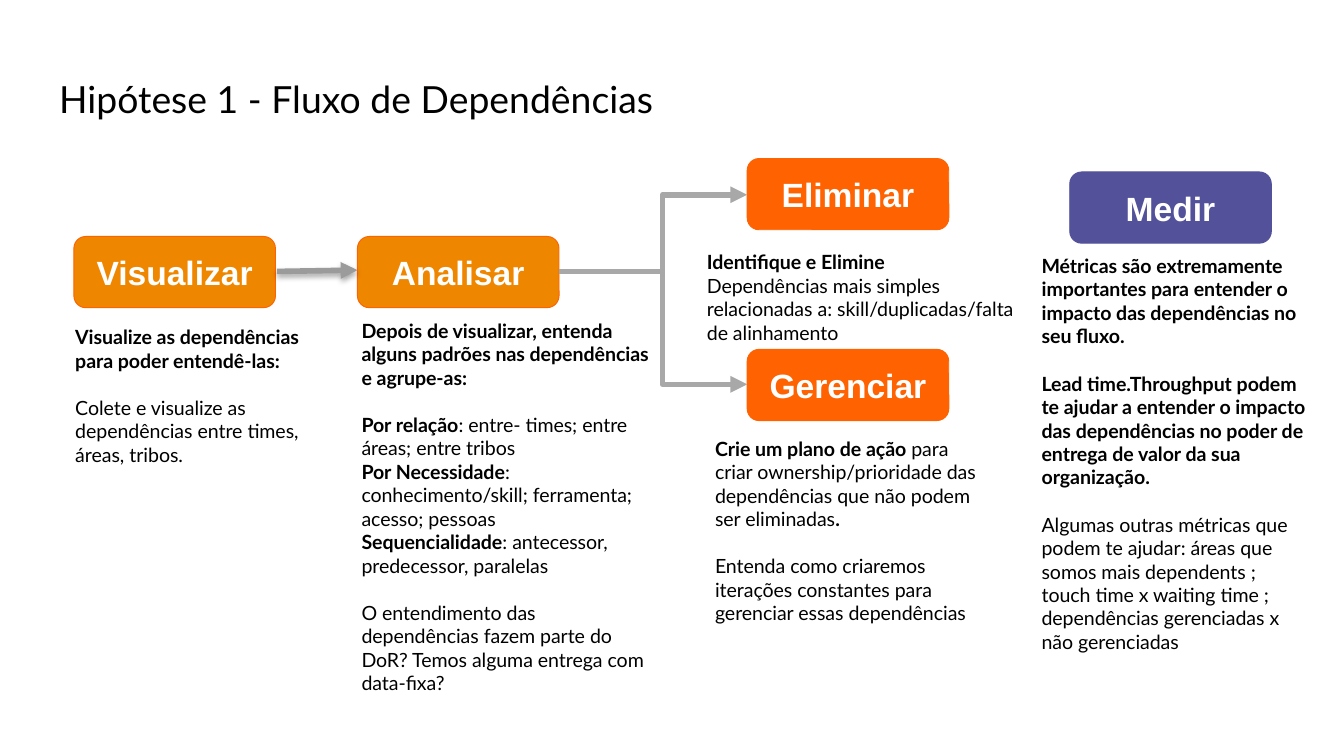
"""Build the dependency flow slide."""
from dataclasses import dataclass
from typing import Optional

from lxml import etree
from pptx import Presentation
from pptx.dml.color import RGBColor
from pptx.enum import shapes, text
from pptx.oxml import ns
from pptx.util import Inches, Pt

INSET = 0.03
STEP_W, STEP_H = 1.5, 0.53
BEND_X = 4.93
LINE = 12.6


@dataclass
class Step:
    label: str
    x: float
    y: float
    fill: str
    line: str


@dataclass
class Para:
    runs: list[tuple[str, bool]]
    gap: float = 0


@dataclass
class Note:
    x: float
    y: float
    w: float
    h: float
    paras: list[Para]


@dataclass
class Arrow:
    start: tuple[float, float]
    end: tuple[float, float]
    color: str
    bend: Optional[float] = None
    shadow: bool = False


STEPS = [
    Step("Visualizar", 0.55, 1.76, "EF8600", "FF6200"),
    Step("Analisar", 2.66, 1.76, "EF8600", "FF6200"),
    Step("Eliminar", 5.56, 1.18, "FF6200", "FF6200"),
    Step("Gerenciar", 5.56, 2.6, "FF6200", "FF6200"),
    Step("Medir", 7.96, 1.28, "525199", "525199"),
]

ARROWS = [
    Arrow((2.06, 2.02), (2.66, 2.01), "9B9B9B", shadow=True),
    Arrow((4.16, 2.02), (5.56, 1.45), "A8A8A8", BEND_X),
    Arrow((4.29, 2.02), (5.56, 2.86), "A8A8A8", BEND_X),
]

NOTES = [
    Note(0.53, 2.39, 1.99, 1.5, [
        Para([("Visualize as dependências para poder entendê-las:", True)]),
        Para([("Colete e visualize as dependências entre times, áreas, tribos.", False)], LINE),
    ]),
    Note(2.66, 2.34, 2.25, 2.47, [
        Para([("Depois de visualizar, entenda alguns padrões nas dependências e agrupe-as:", True)]),
        Para([("Por relação", True), (": entre- times; entre áreas; entre tribos", False)], LINE),
        Para([("Por Necessidade", True),
              (": conhecimento/skill; ferramenta; acesso; pessoas", False)]),
        Para([("Sequencialidade", True), (": antecessor, predecessor, paralelas", False)]),
        Para([("O entendimento das dependências fazem parte do DoR? "
               "Temos alguma entrega com data-fixa?", False)], LINE),
    ]),
    Note(5.23, 1.83, 2.5, 0.78, [
        Para([("Identifique e Elimine", True)]),
        Para([("Dependências mais simples relacionadas a: "
               "skill/duplicadas/falta de alinhamento", False)]),
    ]),
    Note(5.29, 3.22, 2.05, 1.73, [
        Para([("Crie um plano de ação ", True),
              ("para criar ownership/prioridade das dependências "
               "que não podem ser eliminadas", False),
              (".", True)]),
        Para([("Entenda como criaremos iterações constantes "
               "para gerenciar essas dependências", False)], LINE),
    ]),
    Note(7.72, 1.86, 2.05, 0.46, [
        Para([("Métricas são extremamente importantes para entender "
               "o impacto das dependências no seu fluxo.", True)]),
        Para([("Lead time.Throughput podem te ajudar a entender o impacto das "
               "dependências no poder de entrega de valor da sua organização.", True)], LINE),
        Para([("Algumas outras métricas que podem te ajudar: áreas que somos mais "
               "dependents ; touch time x waiting time ; "
               "dependências gerenciadas x não gerenciadas", False)], LINE),
    ]),
]


def rgb(value: str) -> RGBColor:
    return RGBColor.from_string(value)


def sub(parent, tag: str, **attrs: str):
    return etree.SubElement(parent, ns.qn(tag), attrs)


def set_font(font, name: str, size: float, color: str) -> None:
    font.name, font.size = name, Pt(size)
    font.color.rgb = rgb(color)


def set_frame(tf, inset: float, anchor) -> None:
    tf.word_wrap = True
    tf.auto_size = text.MSO_AUTO_SIZE.NONE
    tf.vertical_anchor = anchor
    tf.margin_left = tf.margin_right = tf.margin_top = tf.margin_bottom = Inches(inset)


def set_title(s, title: str) -> None:
    sp = s.shapes.title
    sp.left, sp.top, sp.width, sp.height = map(Inches, (0.34, 0.47, 9.32, 0.63))
    set_frame(sp.text_frame, 0.1, text.MSO_ANCHOR.TOP)
    p = sp.text_frame.paragraphs[0]
    p.text = title
    p.alignment = text.PP_ALIGN.LEFT
    set_font(p.font, "Lato", 20, "000000")


def draw_step(s, step: Step) -> None:
    sp = s.shapes.add_shape(shapes.MSO_SHAPE.ROUNDED_RECTANGLE,
                            *map(Inches, (step.x, step.y, STEP_W, STEP_H)))
    sp.shadow.inherit = False
    sp.fill.solid()
    sp.fill.fore_color.rgb = rgb(step.fill)
    sp.line.color.rgb = rgb(step.line)
    sp.line.width = Pt(0.5)
    set_frame(sp.text_frame, INSET, text.MSO_ANCHOR.MIDDLE)
    p = sp.text_frame.paragraphs[0]
    p.text = step.label
    p.alignment = text.PP_ALIGN.CENTER
    p.font.bold = True
    set_font(p.font, "Arial", 18, "FFFFFF")


def draw_note(s, note: Note) -> None:
    tf = s.shapes.add_textbox(*map(Inches, (note.x, note.y, note.w, note.h))).text_frame
    set_frame(tf, INSET, text.MSO_ANCHOR.TOP)
    for i, para in enumerate(note.paras):
        p = tf.add_paragraph() if i else tf.paragraphs[0]
        p.space_before = Pt(para.gap)
        set_font(p.font, "Lato", 10.5, "000000")
        for words, bold in para.runs:
            r = p.add_run()
            r.text = words
            r.font.bold = bold


def draw_arrow(s, arrow: Arrow) -> None:
    kind = shapes.MSO_CONNECTOR.STRAIGHT if arrow.bend is None else shapes.MSO_CONNECTOR.ELBOW
    cx = s.shapes.add_connector(kind, *map(Inches, arrow.start + arrow.end))
    cx.line.color.rgb = rgb(arrow.color)
    cx.line.width = Pt(3)
    sub(cx.line._get_or_add_ln(), "a:tailEnd", type="triangle")
    props = cx._element.spPr
    if arrow.bend is not None:
        ratio = (arrow.bend - arrow.start[0]) / (arrow.end[0] - arrow.start[0])
        sub(props.find(ns.qn("a:prstGeom")).find(ns.qn("a:avLst")), "a:gd",
            name="adj1", fmla=f"val {round(ratio * 100000)}")
    effects = sub(props, "a:effectLst")
    if arrow.shadow:
        outer = sub(effects, "a:outerShdw", blurRad=str(Pt(3.1)), dist=str(Pt(1.8)),
                    dir="5400000", rotWithShape="0")
        sub(sub(outer, "a:srgbClr", val="000000"), "a:alpha", val="35000")


def main() -> None:
    prs = Presentation()
    prs.slide_width = Inches(10)
    prs.slide_height = prs.slide_width * 9 // 16
    s = prs.slides.add_slide(prs.slide_layouts[5])
    set_title(s, "Hipótese 1 - Fluxo de Dependências")
    for step in STEPS:
        draw_step(s, step)
    for arrow in ARROWS:
        draw_arrow(s, arrow)
    for note in NOTES:
        draw_note(s, note)
    prs.save("out.pptx")


if __name__ == "__main__":
    main()
